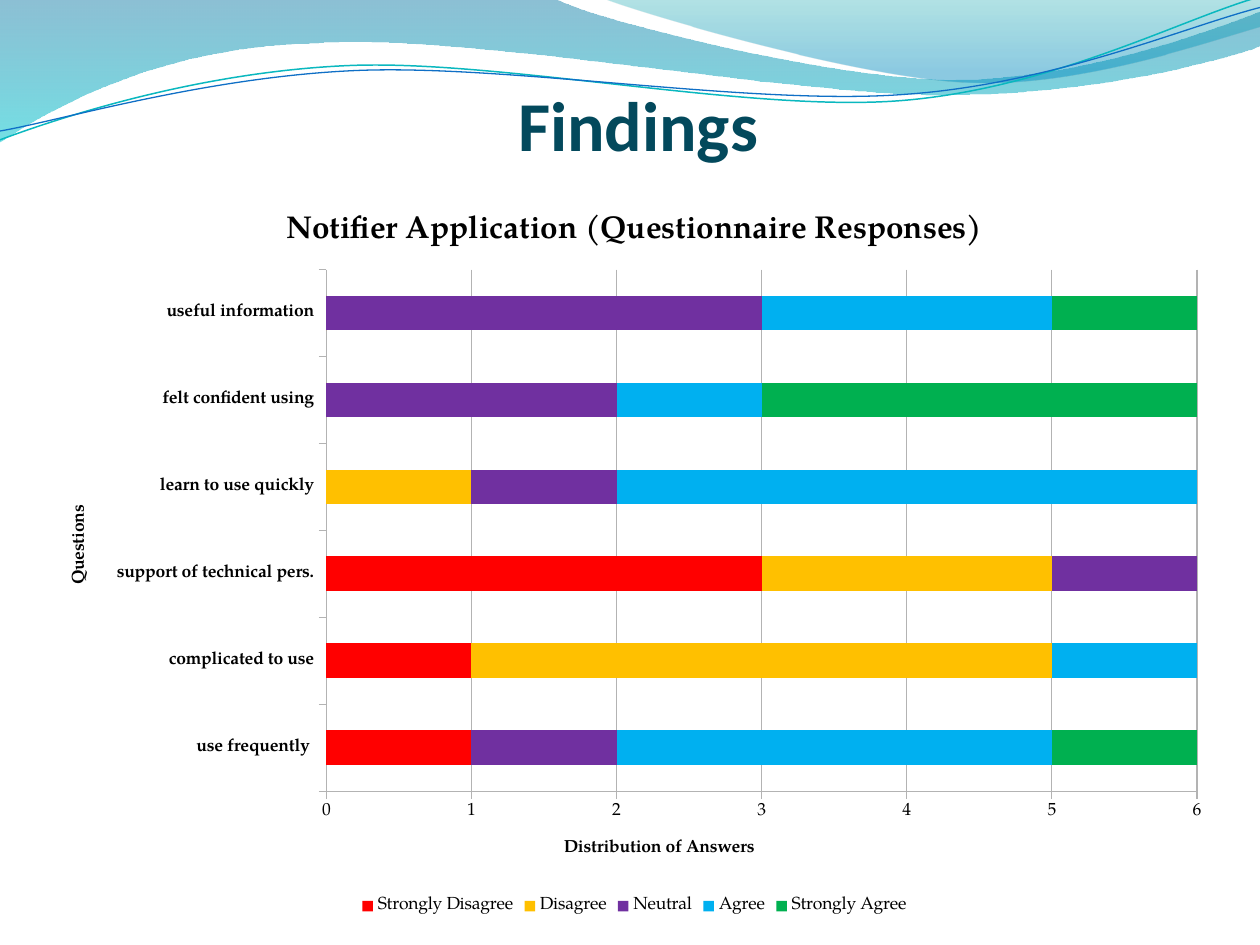
import math
from dataclasses import dataclass

from lxml import etree
from pptx import Presentation
from pptx.chart.data import CategoryChartData
from pptx.dml.color import RGBColor
from pptx.enum.chart import XL_CHART_TYPE, XL_LEGEND_POSITION, XL_TICK_MARK
from pptx.enum.text import MSO_ANCHOR, PP_ALIGN
from pptx.oxml import parse_xml
from pptx.oxml.ns import nsdecls, qn
from pptx.util import Inches, Pt

STACKED_BAR = XL_CHART_TYPE.BAR_STACKED
LEGEND_BOTTOM = XL_LEGEND_POSITION.BOTTOM
TICK_OUTSIDE = XL_TICK_MARK.OUTSIDE
ANCHOR_BOTTOM = MSO_ANCHOR.BOTTOM
ALIGN_CENTER = PP_ALIGN.CENTER
CHART_FONT = "TeX Gyre Pagella"
CHART_WIDTH, CHART_HEIGHT = 9.37, 5.83

Point = tuple[float, float]


@dataclass
class GradientStop:
    color: str
    opacity: int
    position: float


@dataclass
class Wave:
    start: Point
    segments: list[tuple[Point, ...]]
    stops: tuple[GradientStop, ...] = ()
    line_color: str = ""
    line_width: float = 0
    rotation: float = 0
    center: Point = (0, 0)


@dataclass
class Answer:
    name: str
    color: str
    counts: tuple[int, ...]


WAVES = [
    Wave(
        (0, 0),
        [
            ((4.4, -0.01),),
            ((4.76, 0.17), (6.64, 0.63), (7.58, 0.63)),
            ((8.53, 0.63), (9.58, 0.26), (10, 0.09)),
            ((10.01, 0.36),),
            ((9.83, 0.44), (8.7, 0.76), (7.46, 0.75)),
            ((6.22, 0.75), (3.82, 0.28), (2.57, 0.34)),
            ((1.29, 0.36), (0.46, 0.83), (-0.01, 1.13)),
            ((0, 0),),
        ],
        stops=(GradientStop("0074A1", 45, 0), GradientStop("00C6CF", 55, 1)),
    ),
    Wave(
        (4.79, -0.01),
        [
            ((5.09, 0.11), (6.82, 0.62), (7.69, 0.65)),
            ((8.56, 0.69), (9.61, 0.32), (10, 0.21)),
            ((10, 0),),
            ((4.79, -0.01),),
        ],
        stops=(GradientStop("00A1A9", 30, 0), GradientStop("008BBF", 45, 0.8)),
    ),
    Wave(
        (0, 1.11),
        [
            ((0.48, 0.93), (1.58, 0.57), (2.77, 0.52)),
            ((3.95, 0.47), (5.93, 0.89), (7.13, 0.8)),
            ((8.33, 0.71), (9.38, 0.15), (9.98, -0.02)),
        ],
        line_color="0AB8BF",
        line_width=0.85,
        rotation=357.3,
        center=(4.99, 0.58),
    ),
    Wave(
        (0, 1.04),
        [
            ((0.47, 0.96), (1.64, 0.61), (2.83, 0.56)),
            ((4.03, 0.51), (5.97, 0.84), (7.17, 0.75)),
            ((8.36, 0.67), (9.41, 0.21), (10, 0.06)),
        ],
        line_color="0F6FC6",
        line_width=0.75,
        rotation=357.3,
        center=(5, 0.59),
    ),
]

QUESTIONS = [
    "use frequently ",
    "complicated to use",
    "support of technical pers.",
    "learn to use quickly",
    "felt confident using",
    "useful information",
]
ANSWERS = [
    Answer("Strongly Disagree", "FF0000", (1, 1, 3, 0, 0, 0)),
    Answer("Disagree", "FFC000", (0, 4, 2, 1, 0, 0)),
    Answer("Neutral", "7030A0", (1, 0, 1, 1, 2, 3)),
    Answer("Agree", "00B0F0", (3, 1, 0, 4, 1, 2)),
    Answer("Strongly Agree", "00B050", (1, 0, 0, 0, 3, 1)),
]


def set_color(color_format, color: str) -> None:
    color_format.rgb = RGBColor.from_string(color)


def format_font(font, name: str, size: float, bold: bool, color: str) -> None:
    font.name, font.size, font.bold = name, Pt(size), bold
    set_color(font.color, color)


def unrotated(point: Point, wave: Wave) -> tuple[int, int]:
    angle = math.radians(-wave.rotation)
    x, y = point[0] - wave.center[0], point[1] - wave.center[1]
    return (
        Inches(wave.center[0] + x * math.cos(angle) - y * math.sin(angle)),
        Inches(wave.center[1] + x * math.sin(angle) + y * math.cos(angle)),
    )


def bend_segments(shape, segments: list[tuple[Point, ...]]) -> None:
    lines = iter(list(shape._element.spPr.iter(qn("a:lnTo"))))
    for segment in segments:
        first, *others = [next(lines) for _ in segment]
        if not others:
            continue
        curve = etree.Element(qn("a:cubicBezTo"))
        first.addprevious(curve)
        for line in (first, *others):
            curve.append(line[0])
            line.getparent().remove(line)


def draw_wave(slide, wave: Wave) -> None:
    points = [point for segment in wave.segments for point in segment]
    builder = slide.shapes.build_freeform(*unrotated(wave.start, wave))
    builder.add_line_segments([unrotated(point, wave) for point in points], close=bool(wave.stops))
    shape = builder.convert_to_shape()
    bend_segments(shape, wave.segments)
    shape.rotation = wave.rotation
    shape.shadow.inherit = False
    if not wave.stops:
        shape.fill.background()
        set_color(shape.line.color, wave.line_color)
        shape.line.width = Pt(wave.line_width)
        return
    shape.line.fill.background()
    shape.fill.gradient()
    shape.fill.gradient_angle = 270
    for target, stop in zip(shape.fill.gradient_stops, wave.stops):
        set_color(target.color, stop.color)
        target.position = stop.position
    for color, stop in zip(shape._element.spPr.iter(qn("a:srgbClr")), wave.stops):
        etree.SubElement(color, qn("a:alpha")).set("val", str(stop.opacity * 1000))


def format_title(slide) -> None:
    title = slide.shapes.title
    title._element.getparent().append(title._element)
    title.left, title.top = Inches(1.61), Inches(0.6)
    title.width, title.height = Inches(6.93), Inches(0.71)
    frame = title.text_frame
    frame.text = "Findings"
    frame.vertical_anchor = ANCHOR_BOTTOM
    frame.margin_left = frame.margin_top = frame.margin_bottom = 0
    frame.margin_right = Inches(0.02)
    paragraph = frame.paragraphs[0]
    paragraph.alignment = ALIGN_CENTER
    format_font(paragraph.runs[0].font, "Calibri", 40, True, "03495C")


def set_chart_text(owner, text: str, size: float) -> None:
    owner.text_frame.text = text
    run = owner.text_frame.paragraphs[0].runs[0]
    format_font(run.font, CHART_FONT, size, True, "000000")


def format_axis(axis, title: str, bold: bool) -> None:
    set_chart_text(axis.axis_title, title, 10)
    format_font(axis.tick_labels.font, CHART_FONT, 10, bold, "000000")
    axis.major_tick_mark = TICK_OUTSIDE
    set_color(axis.format.line.color, "B3B3B3")


def set_plot_area(chart, left: float, top: float, width: float, height: float) -> None:
    plot_area = chart._chartSpace.chart.plotArea
    for layout in plot_area.findall(qn("c:layout")):
        plot_area.remove(layout)
    shares = (("x", left / CHART_WIDTH), ("y", top / CHART_HEIGHT),
              ("w", width / CHART_WIDTH), ("h", height / CHART_HEIGHT))
    modes = '<c:layoutTarget val="inner"/><c:xMode val="edge"/><c:yMode val="edge"/>'
    sizes = "".join(f'<c:{name} val="{share}"/>' for name, share in shares)
    plot_area.insert(0, parse_xml(
        f'<c:layout {nsdecls("c")}><c:manualLayout>{modes}{sizes}</c:manualLayout></c:layout>'
    ))


def draw_chart(slide) -> None:
    data = CategoryChartData()
    data.categories = QUESTIONS
    for answer in ANSWERS:
        data.add_series(answer.name, answer.counts)
    chart = slide.shapes.add_chart(
        STACKED_BAR, Inches(0.35), Inches(1.47), Inches(CHART_WIDTH), Inches(CHART_HEIGHT), data
    ).chart
    format_font(chart.font, CHART_FONT, 10, False, "000000")
    set_chart_text(chart.chart_title, "Notifier Application (Questionnaire Responses)", 18)
    chart.has_legend = True
    chart.legend.position = LEGEND_BOTTOM
    chart.legend.include_in_layout = False
    format_font(chart.legend.font, CHART_FONT, 10, False, "000000")
    format_axis(chart.category_axis, "Questions", True)
    values = chart.value_axis
    format_axis(values, "Distribution of Answers", False)
    values.minimum_scale, values.maximum_scale, values.major_unit = 0, 6, 1
    set_color(values.major_gridlines.format.line.color, "B3B3B3")
    plot = chart.plots[0]
    plot.gap_width, plot.overlap, plot.vary_by_categories = 150, 100, False
    for series, answer in zip(plot.series, ANSWERS):
        series.format.fill.solid()
        set_color(series.format.fill.fore_color, answer.color)
    set_plot_area(chart, 2.24, 0.67, 6.91, 4.14)


def main() -> None:
    presentation = Presentation()
    presentation.slide_width, presentation.slide_height = Inches(10), Inches(7.5)
    slide = presentation.slides.add_slide(presentation.slide_layouts[5])
    for wave in WAVES:
        draw_wave(slide, wave)
    format_title(slide)
    draw_chart(slide)
    presentation.save("out.pptx")


if __name__ == "__main__":
    main()
